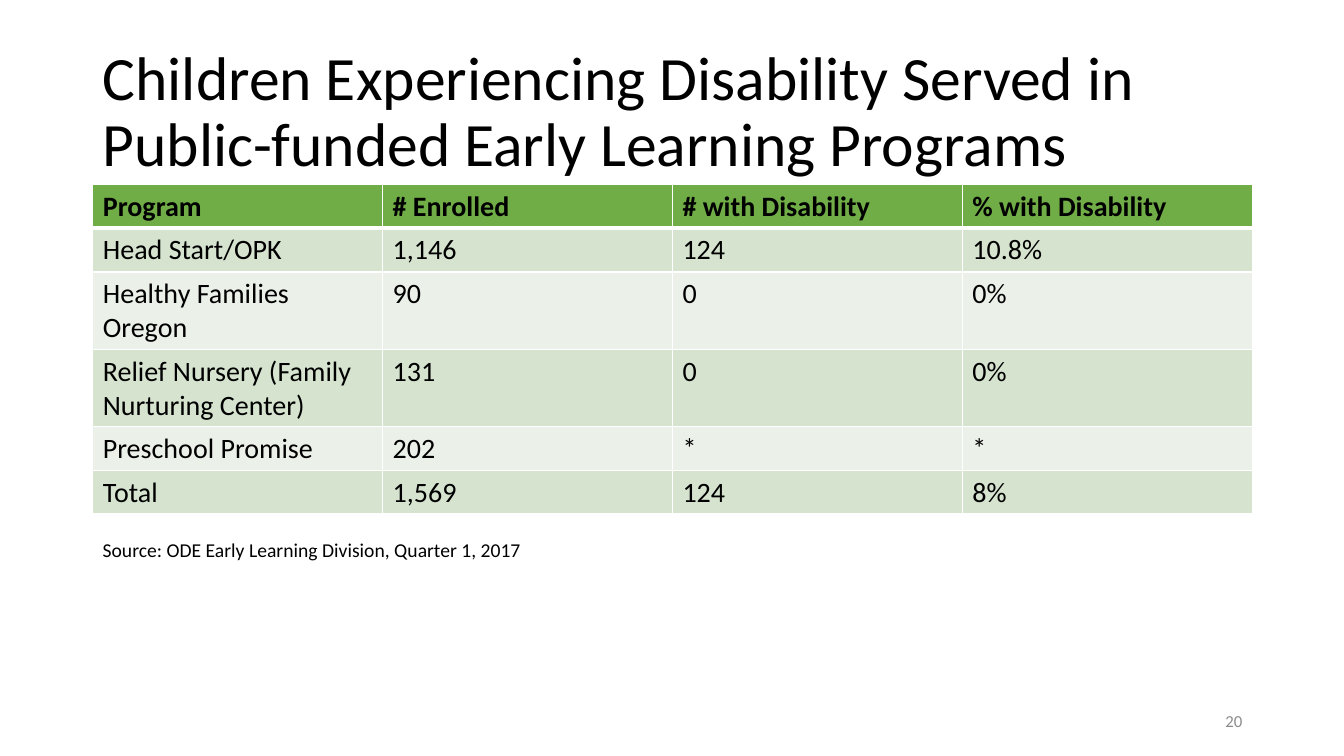
import pptx
import pptx.util
import pptx.dml.color
import pptx.enum.text
import lxml.etree

WIDE, HIGH = 13.33, 7.5
LEFT, SPAN = 0.92, 11.5
FONT = "Calibri"
ALIGN = pptx.enum.text.PP_ALIGN
ANCHOR = pptx.enum.text.MSO_ANCHOR
HEADS = ("Program", "# Enrolled", "# with Disability", "% with Disability")
ROWS = (
    ("Head Start/OPK", "1,146", "124", "10.8%"),
    ("Healthy Families Oregon", "90", "0", "0%"),
    ("Relief Nursery (Family Nurturing Center)", "131", "0", "0%"),
    ("Preschool Promise", "202", "*", "*"),
    ("Total", "1,569", "124", "8%"),
)


def color(code):
    return pptx.dml.color.RGBColor.from_string(code)


def inches(*sizes):
    return [pptx.util.Inches(size) for size in sizes]


def style(par, size, code="000000", bold=False):
    for run in par.runs:
        run.font.name = FONT
        run.font.size = pptx.util.Pt(size)
        run.font.bold = bold
        run.font.color.rgb = color(code)


def label(slide, box, text, size, code="000000",
          anchor=ANCHOR.TOP, align=ALIGN.LEFT, lines=1.0):
    frame = slide.shapes.add_textbox(*inches(*box)).text_frame
    frame.word_wrap = True
    frame.vertical_anchor = anchor
    frame.text = text
    par = frame.paragraphs[0]
    par.alignment = align
    par.line_spacing = lines
    style(par, size, code)


def border(cell, side, points):
    space = "{http://schemas.openxmlformats.org/drawingml/2006/main}"
    props = cell._tc.get_or_add_tcPr()
    line = lxml.etree.SubElement(props, space + "ln" + side,
                                 w=str(pptx.util.Pt(points)))
    fill = lxml.etree.SubElement(line, space + "solidFill")
    lxml.etree.SubElement(fill, space + "srgbClr", val="FFFFFF")


def grid(slide, box):
    data = (HEADS,) + ROWS
    table = slide.shapes.add_table(len(data), len(HEADS), *inches(*box)).table
    for col in table.columns:
        col.width = pptx.util.Inches(box[2] / len(HEADS))
    for r, row in enumerate(data):
        # Short rows grow where a name wraps
        table.rows[r].height = pptx.util.Inches(0.41)
        shade = "70AD47" if r == 0 else ("EBF1E9", "D5E3CF")[r % 2]
        for c, text in enumerate(row):
            cell = table.cell(r, c)
            # The rule under the header is thicker
            for side in "LRTB":
                thick = (r, side) in ((0, "B"), (1, "T"))
                border(cell, side, 3 if thick else 1)
            cell.fill.solid()
            cell.fill.fore_color.rgb = color(shade)
            cell.text = text
            style(cell.text_frame.paragraphs[0], 20, bold=r == 0)


def main():
    deck = pptx.Presentation()
    deck.slide_width, deck.slide_height = inches(WIDE, HIGH)
    slide = deck.slides.add_slide(deck.slide_layouts[6])

    # Title
    label(slide, (LEFT, 0.4, SPAN, 1.45),
          "Children Experiencing Disability Served in "
          "Public-funded Early Learning Programs",
          44, anchor=ANCHOR.MIDDLE, lines=0.9)
    # Enrollment table
    grid(slide, (LEFT, 1.83, SPAN, 3.27))
    # Source and slide number
    label(slide, (LEFT, 5.29, 7.76, 0.34),
          "Source: ODE Early Learning Division, Quarter 1, 2017", 14)
    label(slide, (LEFT + SPAN - 3, 6.95, 3, 0.4), "20", 12, "8C8C8C",
          ANCHOR.MIDDLE, ALIGN.RIGHT)
    deck.save("out.pptx")


if __name__ == "__main__":
    main()
